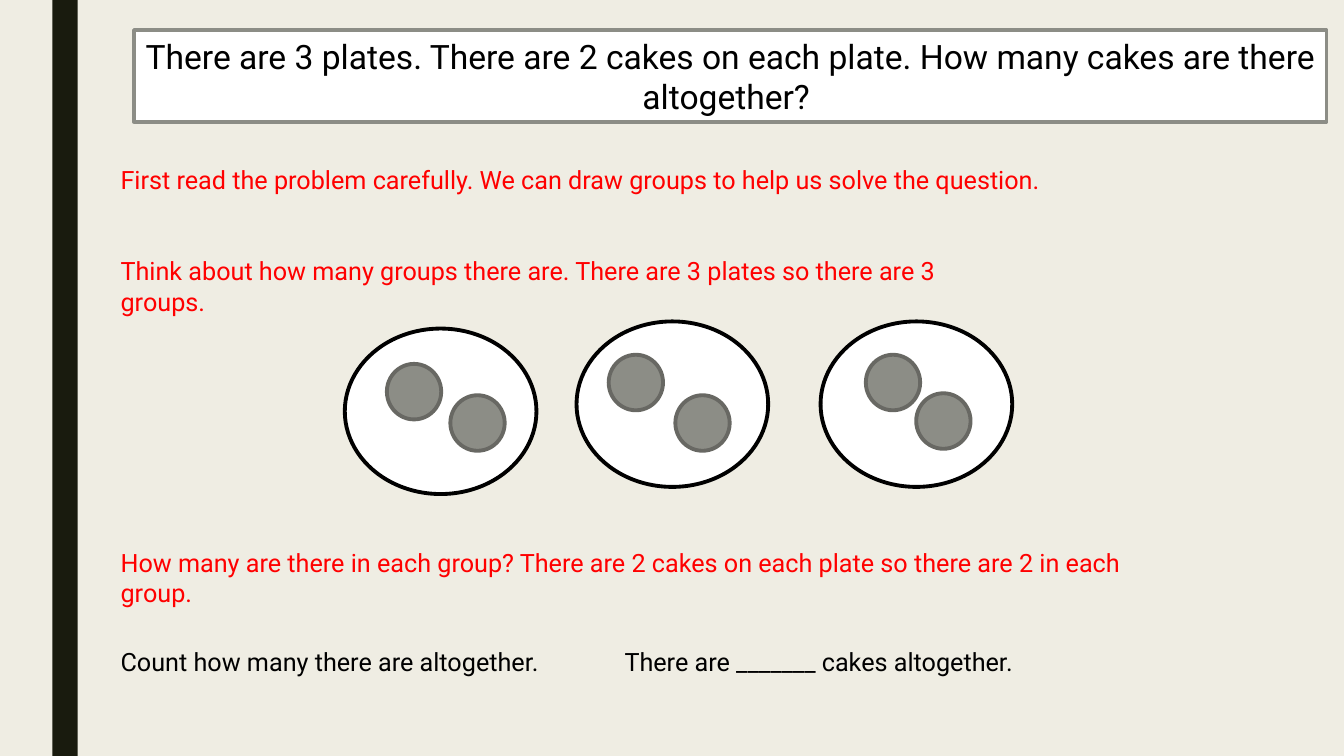
from lxml import etree
from pptx import Presentation
from pptx.dml.color import RGBColor
from pptx.enum.shapes import MSO_SHAPE
from pptx.enum.text import MSO_ANCHOR, MSO_AUTO_SIZE, PP_ALIGN
from pptx.oxml.ns import qn
from pptx.util import Cm, Pt

OVAL = MSO_SHAPE.OVAL
RECT = MSO_SHAPE.RECTANGLE
TOP = MSO_ANCHOR.TOP
MIDDLE = MSO_ANCHOR.MIDDLE
GROW = MSO_AUTO_SIZE.SHAPE_TO_FIT_TEXT
CENTER = PP_ALIGN.CENTER
LEFT = PP_ALIGN.LEFT

FONT = "Roboto"
COLORS = {
    "back": "EFEDE3",
    "bar": "191B0E",
    "white": "FFFFFF",
    "black": "000000",
    "red": "FF0000",
    "gray": "8C8D86",
    "rim": "686863",
}
MARGIN = 2.79
PLATE = (4.83, 4.17)
CAKE = (1.37, 1.4)

STEPS = [
    (4.01, 29.57, "red", "First read the problem carefully. We can draw groups to help us solve the question."),
    (6.32, 22.71, "red", "Think about how many groups there are. There are 3 plates so there are 3 groups."),
    (13.67, 26.85, "red", "How many are there in each group? There are 2 cakes on each plate so there are 2 in each group."),
    (16.15, 23.09, "black", "Count how many there are altogether.\tThere are _______ cakes altogether."),
]
PLATES = [
    ((8.69, 8.28), [(9.75, 9.17), (11.35, 9.96)]),
    ((14.53, 8.1), [(15.34, 8.94), (17.02, 9.96)]),
    ((20.68, 8.1), [(21.82, 8.94), (23.09, 9.91)]),
]


def rgb(name):
    return RGBColor.from_string(COLORS[name])


def paint(shape, fill, line=None):
    shape.fill.solid()
    shape.fill.fore_color.rgb = rgb(fill)
    if line:
        shape.line.color.rgb = rgb(line)
        shape.line.width = Pt(2.75)
    else:
        shape.line.fill.background()


def add_form(slide, kind, place, size, fill, line=None):
    shape = slide.shapes.add_shape(kind, *map(Cm, place + size))
    shape.shadow.inherit = False
    paint(shape, fill, line)


def write(shape, text, size, color, align, anchor):
    frame = shape.text_frame
    frame.word_wrap = True
    frame.auto_size = GROW
    frame.vertical_anchor = anchor
    para = frame.paragraphs[0]
    para.text = text
    para.alignment = align
    para.font.name = FONT
    para.font.size = Pt(size)
    para.font.color.rgb = rgb(color)
    return para


def set_tab(para, place):
    props = para._p.get_or_add_pPr()
    tabs = etree.Element(qn("a:tabLst"))
    etree.SubElement(tabs, qn("a:tab"), pos=str(Cm(place)), algn="l")
    props.insert(0, tabs)


def add_title(slide, text):
    title = slide.shapes.title
    title.left, title.top = Cm(3.38), Cm(0.76)
    title.width, title.height = Cm(30.05), Cm(2.31)
    paint(title, "white", "gray")
    write(title, text, 24, "black", CENTER, MIDDLE)


def add_step(slide, top, width, color, text):
    box = slide.shapes.add_textbox(Cm(MARGIN), Cm(top), Cm(width), Cm(1.02))
    para = write(box, text, 18, color, LEFT, TOP)
    if "\t" in text:
        set_tab(para, 12.7)


def add_plate(slide, place, cakes):
    add_form(slide, OVAL, place, PLATE, "white", "black")
    for cake in cakes:
        add_form(slide, OVAL, cake, CAKE, "gray", "rim")


def main():
    deck = Presentation()
    deck.slide_width, deck.slide_height = Cm(33.87), Cm(19.05)
    slide = deck.slides.add_slide(deck.slide_layouts.get_by_name("Title Only"))
    slide.background.fill.solid()
    slide.background.fill.fore_color.rgb = rgb("back")
    add_form(slide, RECT, (1.32, 0), (0.64, 19.05), "bar")
    add_title(slide, "There are 3 plates. There are 2 cakes on each plate. How many cakes are there altogether? ")
    for step in STEPS:
        add_step(slide, *step)
    for place, cakes in PLATES:
        add_plate(slide, place, cakes)
    deck.save("out.pptx")


if __name__ == "__main__":
    main()
